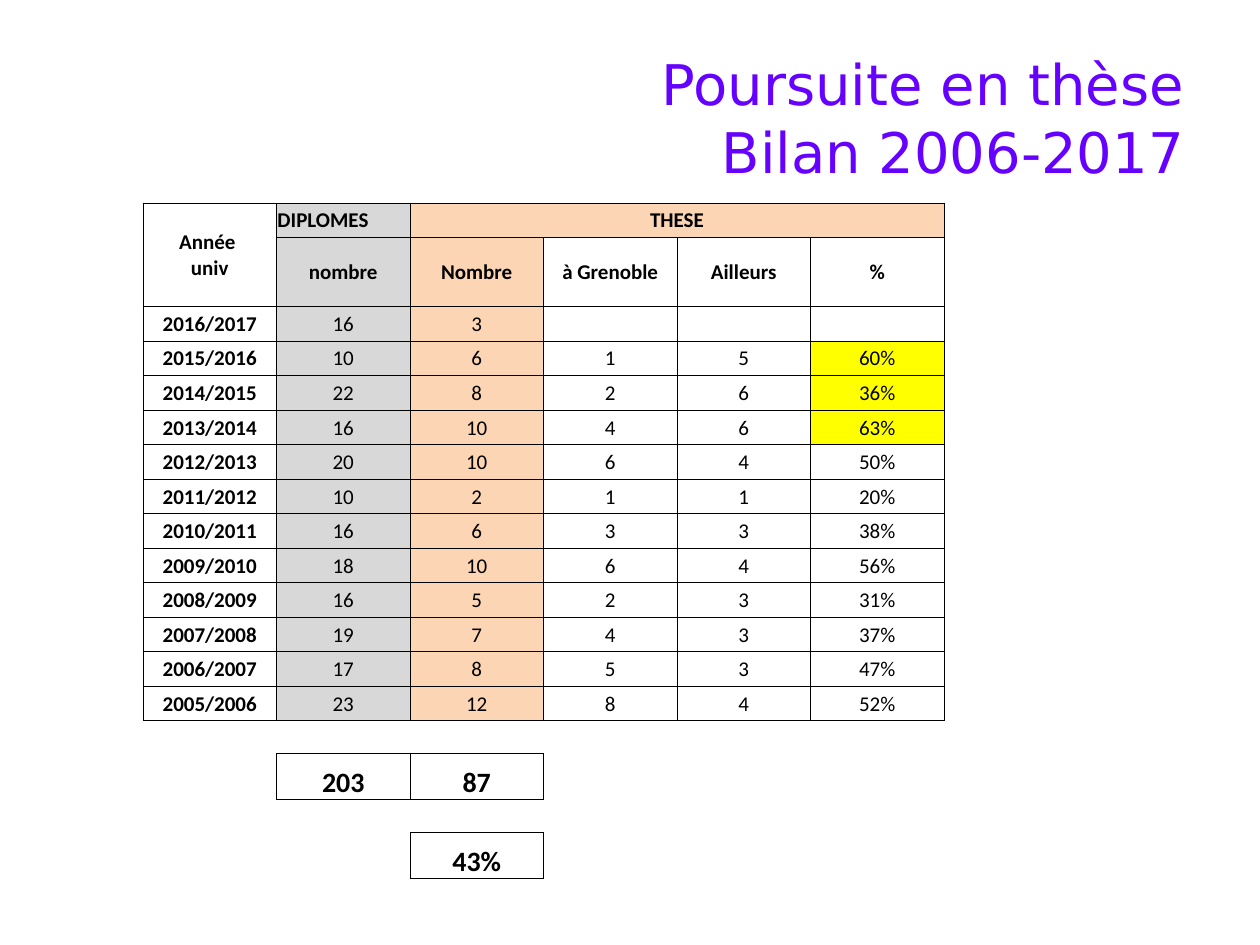
from lxml import etree
from pptx import Presentation
from pptx import util as u
from pptx.dml.color import RGBColor
from pptx.enum import text
from pptx.oxml import ns

PX = 914400 / 126


def px(n):
    return u.Emu(round(n * PX))


def color(hex_code):
    return RGBColor.from_string(hex_code)


deck = Presentation()
deck.slide_width, deck.slide_height = px(1260), px(945)
slide = deck.slides.add_slide(deck.slide_layouts[6])

# Title
title = slide.shapes.add_textbox(px(343), px(38), px(854), px(158)).text_frame
title.word_wrap = True
title.vertical_anchor = text.MSO_ANCHOR.MIDDLE
heading = title.paragraphs[0]
heading.text = "Poursuite en thèse\vBilan 2006-2017"
heading.alignment = text.PP_ALIGN.RIGHT
heading.font.name = "DejaVu Sans"
heading.font.size = u.Pt(32)
heading.font.color.rgb = color("6600FF")

# Table content: two header rows, one row per year, then the totals
rows = [
    ["Année \vuniv", "DIPLOMES", "THESE", "", "", ""],
    ["", "nombre", "Nombre", "à Grenoble", "Ailleurs", "%"],
    ["2016/2017", "16", "3", "", "", ""],
    ["2015/2016", "10", "6", "1", "5", "60%"],
    ["2014/2015", "22", "8", "2", "6", "36%"],
    ["2013/2014", "16", "10", "4", "6", "63%"],
    ["2012/2013", "20", "10", "6", "4", "50%"],
    ["2011/2012", "10", "2", "1", "1", "20%"],
    ["2010/2011", "16", "6", "3", "3", "38%"],
    ["2009/2010", "18", "10", "6", "4", "56%"],
    ["2008/2009", "16", "5", "2", "3", "31%"],
    ["2007/2008", "19", "7", "4", "3", "37%"],
    ["2006/2007", "17", "8", "5", "3", "47%"],
    ["2005/2006", "23", "12", "8", "4", "52%"],
    [""] * 6,
    ["", "203", "87", "", "", ""],
    [""] * 6,
    ["", "", "43%", "", "", ""],
]
n_cols = 6
totals_start = 14
grid_width, years_height = 801, 518
unit = years_height / 15  # the second header row is two units high
heights = [unit, 2 * unit] + [unit] * 12 + [33, 46, 33, 46]

table = slide.shapes.add_table(len(rows), n_cols, px(143), px(203),
                               px(grid_width), px(sum(heights))).table
table.first_row = table.horz_banding = False
for column in table.columns:
    column.width = px(grid_width / n_cols)
for row, height in zip(table.rows, heights):
    row.height = px(height)

# Cells with a frame: the whole yearly grid and the three totals
framed = {(r, c) for r in range(totals_start) for c in range(n_cols)}
framed |= {(15, 1), (15, 2), (17, 2)}
sides = {"a:lnL": (0, -1), "a:lnR": (0, 1), "a:lnT": (-1, 0), "a:lnB": (1, 0)}
column_fills = {1: "D8D8D8", 2: "FCD5B4"}

for r, values in enumerate(rows):
    for c, value in enumerate(values):
        cell = table.cell(r, c)
        in_totals = r >= totals_start
        cell.margin_left = cell.margin_right = cell.margin_top = px(1)
        cell.margin_bottom = 0
        cell.vertical_anchor = text.MSO_ANCHOR.BOTTOM if in_totals else text.MSO_ANCHOR.MIDDLE

        # Borders
        properties = cell._tc.get_or_add_tcPr()
        for tag, (dr, dc) in sides.items():
            line = etree.SubElement(properties, ns.qn(tag), w="6350")
            if framed & {(r, c), (r + dr, c + dc)}:
                fill = etree.SubElement(line, ns.qn("a:solidFill"))
                etree.SubElement(fill, ns.qn("a:srgbClr"), val="000000")
            else:
                etree.SubElement(line, ns.qn("a:noFill"))

        # Fill
        shade = "FFFFFF"
        if not in_totals:
            shade = column_fills.get(c, shade)
        if (r == 0 and c > 2) or (r, c) == (0, 2):
            shade = "FCD5B4"
        elif c == 5 and 3 <= r <= 5:
            shade = "FFFF00"
        cell.fill.solid()
        cell.fill.fore_color.rgb = color(shade)

        # Text
        entry = cell.text_frame.paragraphs[0]
        entry.text = value
        entry.alignment = text.PP_ALIGN.LEFT if value == "DIPLOMES" else text.PP_ALIGN.CENTER
        entry.font.name = "Calibri"
        entry.font.size = u.Pt(16 if in_totals and value else 12)
        entry.font.bold = r < 2 or c == 0 or in_totals
        entry.font.color.rgb = color("000000")
        if not value:
            etree.SubElement(entry._p, ns.qn("a:endParaRPr"), sz="1200")

table.cell(0, 0).merge(table.cell(1, 0))
table.cell(0, 2).merge(table.cell(0, 5))

deck.save("out.pptx")
